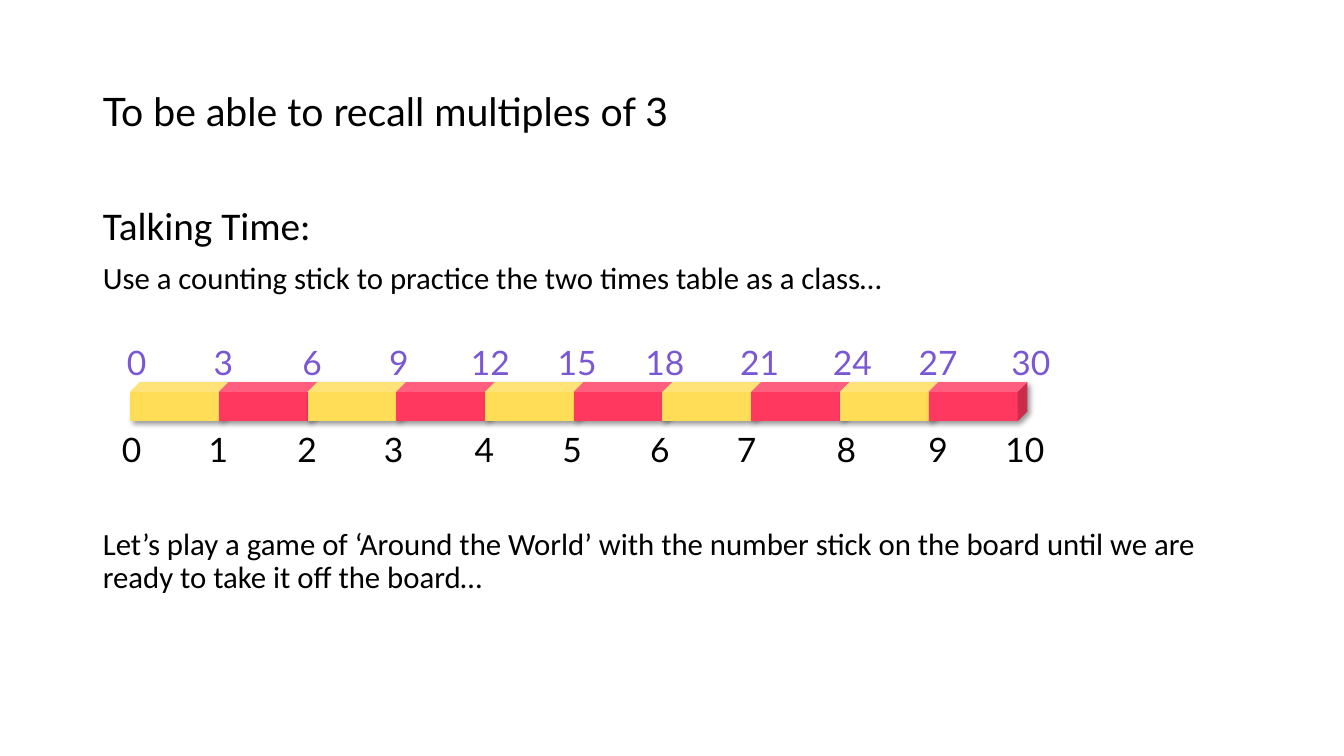
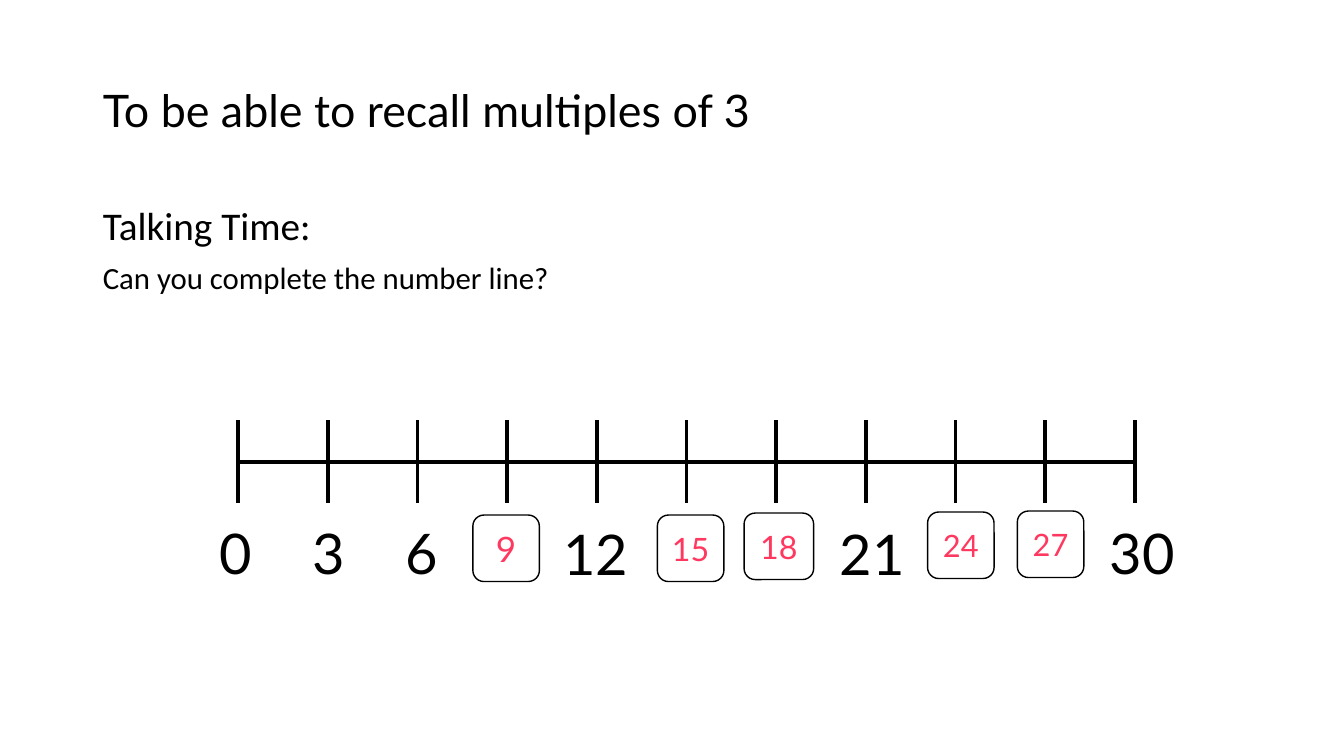
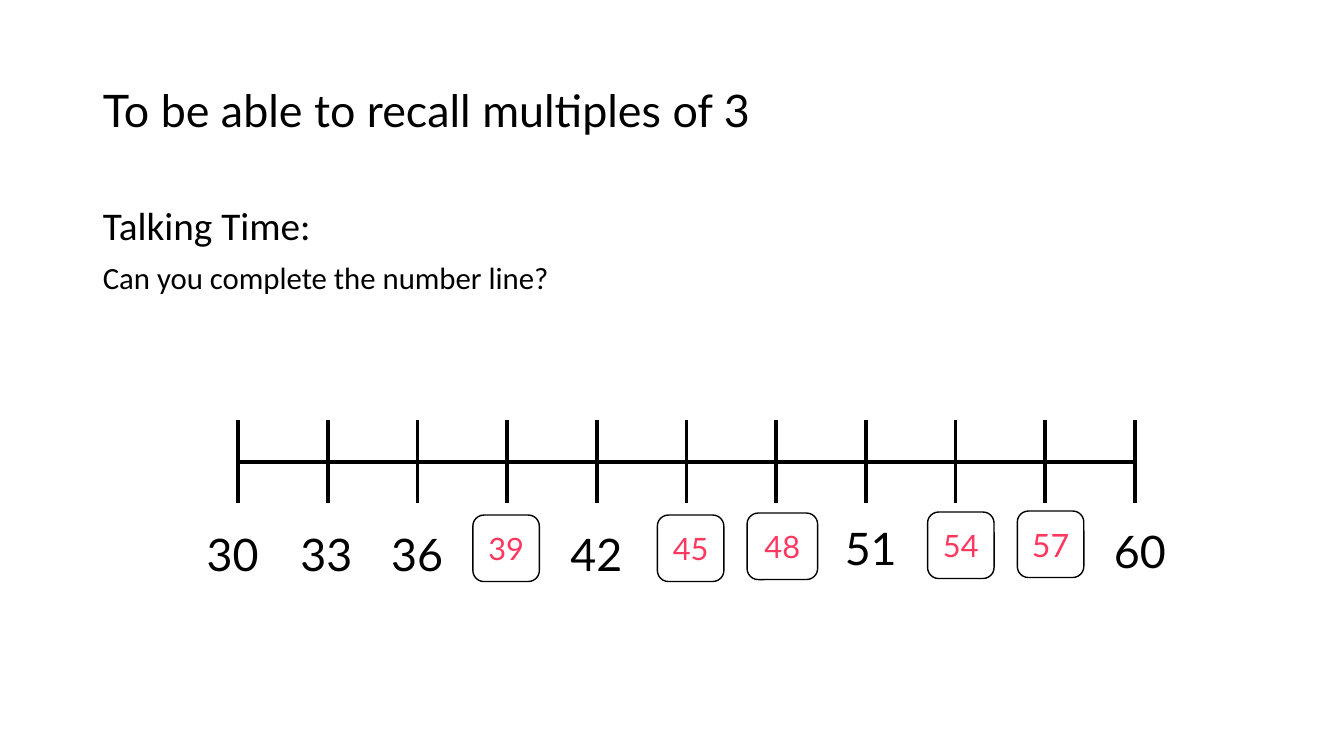
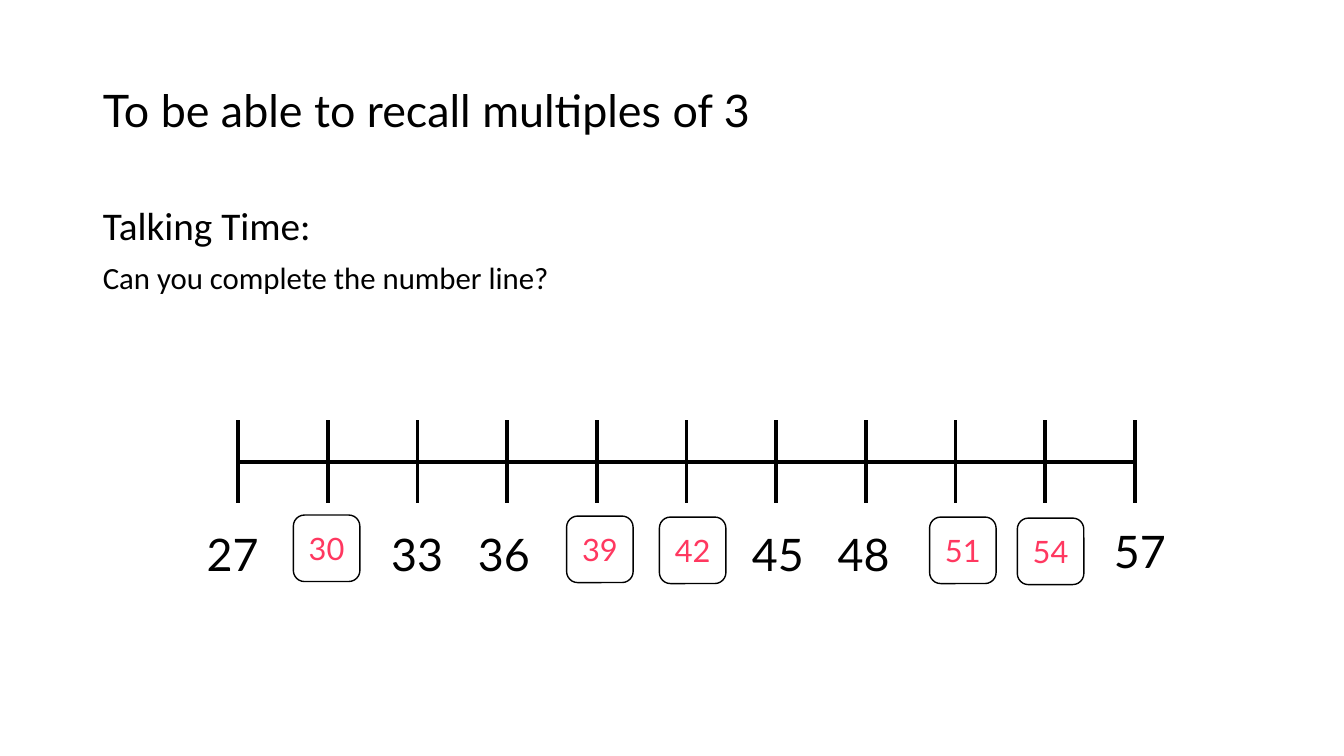
from dataclasses import dataclass

from pptx import Presentation
from pptx.dml.color import RGBColor
from pptx.enum.shapes import MSO_SHAPE
from pptx.enum.text import MSO_ANCHOR, MSO_AUTO_SIZE, PP_ALIGN
from pptx.oxml.ns import qn
from pptx.oxml.xmlchemy import OxmlElement
from pptx.util import Emu, Pt

CUBE = MSO_SHAPE.CUBE
ROUNDED = MSO_SHAPE.ROUNDED_RECTANGLE
LEFT, CENTER = PP_ALIGN.LEFT, PP_ALIGN.CENTER
TOP, MIDDLE = MSO_ANCHOR.TOP, MSO_ANCHOR.MIDDLE

# Shared style
EMU_PER_PX = 9144  # 100 px to the inch
BLACK, WHITE = "000000", "FFFFFF"
YELLOW, RED, PURPLE = "FFDD57", "FF3860", "7957D5"
LATO, CALIBRI = "Lato", "Calibri"
NO_TABLE_STYLE = "{2D5ABB26-0587-4C30-8999-92F81FD0307C}"
TITLE = "To be able to recall multiples of 3"
HEADING = "Talking Time:"


@dataclass(frozen=True)
class BodyLine:
    text: str
    size: int = 22
    space_before: int = 10


@dataclass(frozen=True)
class Mark:
    """A number under the line: a printed one, or an answer in a box."""
    text: str
    left: int
    top: int
    size: int
    width: int = 66
    boxed: bool = False


def px(length: int) -> Emu:
    return Emu(length * EMU_PER_PX)


def box(left: int, top: int, width: int, height: int) -> tuple:
    return px(left), px(top), px(width), px(height)


def rgb(value: str) -> RGBColor:
    return RGBColor.from_string(value)


def add_run(paragraph, text: str, size: int, color: str = BLACK, font: str = LATO) -> None:
    run = paragraph.add_run()
    run.text = text
    run.font.size = Pt(size)
    run.font.name = font
    run.font.color.rgb = rgb(color)


def place(shape, left: int, top: int, width: int, height: int) -> None:
    shape.left, shape.top, shape.width, shape.height = box(left, top, width, height)


def add_child(parent, tag: str, **attributes):
    child = OxmlElement(tag)
    for name, value in attributes.items():
        child.set(name, str(value))
    parent.append(child)
    return child


# Title and body
def add_lesson_slide(presentation, lines: list[BodyLine], title_size: int = 32,
                     title_width: int = 960):
    slide = presentation.slides.add_slide(presentation.slide_layouts[1])
    title, body = slide.shapes.title, slide.placeholders[1]
    place(title, 92, 40, title_width, 145)
    title.text_frame.vertical_anchor = MIDDLE
    paragraph = title.text_frame.paragraphs[0]
    paragraph.alignment = LEFT
    paragraph.line_spacing = 0.9
    add_run(paragraph, TITLE, title_size)

    place(body, 92, 200, 1150, 476)
    frame = body.text_frame
    frame.auto_size = MSO_AUTO_SIZE.NONE
    for index, line in enumerate([BodyLine(HEADING, 28, 0), *lines]):
        paragraph = frame.add_paragraph() if index else frame.paragraphs[0]
        properties = paragraph._p.get_or_add_pPr()
        properties.set("marL", "0")
        properties.set("indent", "0")
        add_child(properties, "a:buNone")
        paragraph.line_spacing = 0.9
        paragraph.space_before = Pt(line.space_before)
        add_run(paragraph, line.text, line.size, font=CALIBRI)
    return slide


# Counting stick
def add_cube(slide, left: int, color: str) -> None:
    cube = slide.shapes.add_shape(CUBE, *box(left, 379, 98, 39))
    cube.fill.solid()
    cube.fill.fore_color.rgb = rgb(color)
    cube.line.fill.background()
    cube.shadow.inherit = False
    effects = cube._element.spPr.find(qn("a:effectLst"))
    shadow = add_child(effects, "a:outerShdw", blurRad=Pt(4), dist=Pt(3),
                       dir=45 * 60000, algn="tl", rotWithShape=0)
    shadow_color = add_child(shadow, "a:srgbClr", val=BLACK)
    add_child(shadow_color, "a:alpha", val=40000)


def add_stick_label(slide, text: str, left: int, top: int, color: str) -> None:
    label = slide.shapes.add_shape(ROUNDED, *box(left, top, 91, 54))
    label.fill.background()
    label.line.fill.background()
    label.shadow.inherit = False
    label.text_frame.vertical_anchor = TOP
    paragraph = label.text_frame.paragraphs[0]
    paragraph.alignment = CENTER
    add_run(paragraph, text, 24, color)


def add_counting_stick(slide) -> None:
    for index in range(10):
        add_cube(slide, 129 + 88 * index, RED if index % 2 else YELLOW)
    count_lefts = [85, 171, 259, 345, 435, 522, 609, 695, 794, 885, 971]
    multiple_lefts = [90, 176, 264, 350, 441, 527, 614, 708, 800, 885, 977]
    for number, left in enumerate(count_lefts):
        add_stick_label(slide, str(number), left, 418, BLACK)
    for number, left in enumerate(multiple_lefts):
        add_stick_label(slide, str(3 * number), left, 332, PURPLE)


# Number line
def set_borders(cell, sides: str) -> None:
    properties = cell._tc.get_or_add_tcPr()
    for side in sides:
        line = add_child(properties, f"a:ln{side}", w=Pt(3))
        fill = add_child(line, "a:solidFill")
        add_child(fill, "a:srgbClr", val=BLACK)
    cell.fill.background()


def add_number_line(slide) -> None:
    table = slide.shapes.add_table(2, 10, *box(236, 417, 890, 82)).table
    table.first_row = False
    table.horz_banding = False
    table._tbl.tblPr.find(qn("a:tableStyleId")).text = NO_TABLE_STYLE
    for column in table.columns:
        column.width = px(89)
    for row, sides in zip(table.rows, ("LRB", "LRT")):
        row.height = px(41)
        for cell in row.cells:
            set_borders(cell, sides)


def add_mark(slide, mark: Mark) -> None:
    if mark.boxed:
        shape = slide.shapes.add_shape(ROUNDED, *box(mark.left, mark.top, mark.width, 66))
        shape.fill.solid()
        shape.fill.fore_color.rgb = rgb(WHITE)
        shape.line.color.rgb = rgb(BLACK)
        shape.line.width = Pt(1)
        shape.shadow.inherit = False
        shape.text_frame.vertical_anchor = MIDDLE
    else:
        height = 77 if mark.size == 40 else 64
        shape = slide.shapes.add_textbox(*box(mark.left, mark.top, mark.width, height))
        shape.text_frame.word_wrap = True
    paragraph = shape.text_frame.paragraphs[0]
    paragraph.alignment = CENTER if mark.boxed else LEFT
    add_run(paragraph, mark.text, mark.size, RED if mark.boxed else BLACK)


def printed(text: str, left: int, top: int = 518, size: int = 32, width: int = 79) -> Mark:
    return Mark(text, left, top, size, width)


def answer(text: str, left: int, top: int, size: int = 22, width: int = 66) -> Mark:
    return Mark(text, left, top, size, width, boxed=True)


NUMBER_LINES = [
    [
        printed("0", 208, 510, 40, 55), printed("3", 300, 510, 40, 55),
        printed("6", 392, 510, 40, 55), answer("9", 469, 511, 25),
        printed("12", 549, 511, 40, 98), answer("15", 652, 511, 23),
        answer("18", 738, 509, 23, 69), printed("21", 823, 511, 40, 98),
        answer("24", 920, 508), answer("27", 1009, 507),
        printed("30", 1091, 510, 40, 98),
    ],
    [
        printed("30", 195), printed("33", 288), printed("36", 378),
        answer("39", 469, 511), printed("42", 556), answer("45", 652, 511),
        answer("48", 741, 509, width=70), printed("51", 828, 512),
        answer("54", 920, 508), answer("57", 1009, 507, 23),
        printed("60", 1095, 515),
    ],
    [
        printed("27", 195), answer("30", 291, 511), printed("33", 378),
        printed("36", 464), answer("39", 562, 512), answer("42", 654, 513),
        printed("45", 736), printed("48", 821, width=89),
        answer("51", 922, 513), answer("54", 1009, 514),
        printed("57", 1095, 515),
    ],
]


def main() -> None:
    presentation = Presentation()
    presentation.slide_width, presentation.slide_height = px(1333), px(750)

    # Counting stick slide; the wide gap leaves room for the stick
    stick_slide = add_lesson_slide(presentation, [
        BodyLine("Use a counting stick to practice the two times table as a class…"),
        BodyLine("Let’s play a game of ‘Around the World’ with the number stick on the "
                 "board until we are ready to take it off the board…", space_before=166),
    ], title_size=28, title_width=976)
    add_counting_stick(stick_slide)

    # Number line slides
    for marks in NUMBER_LINES:
        slide = add_lesson_slide(presentation, [BodyLine("Can you complete the number line?")])
        add_number_line(slide)
        for mark in marks:
            add_mark(slide, mark)

    presentation.save("out.pptx")


if __name__ == "__main__":
    main()
